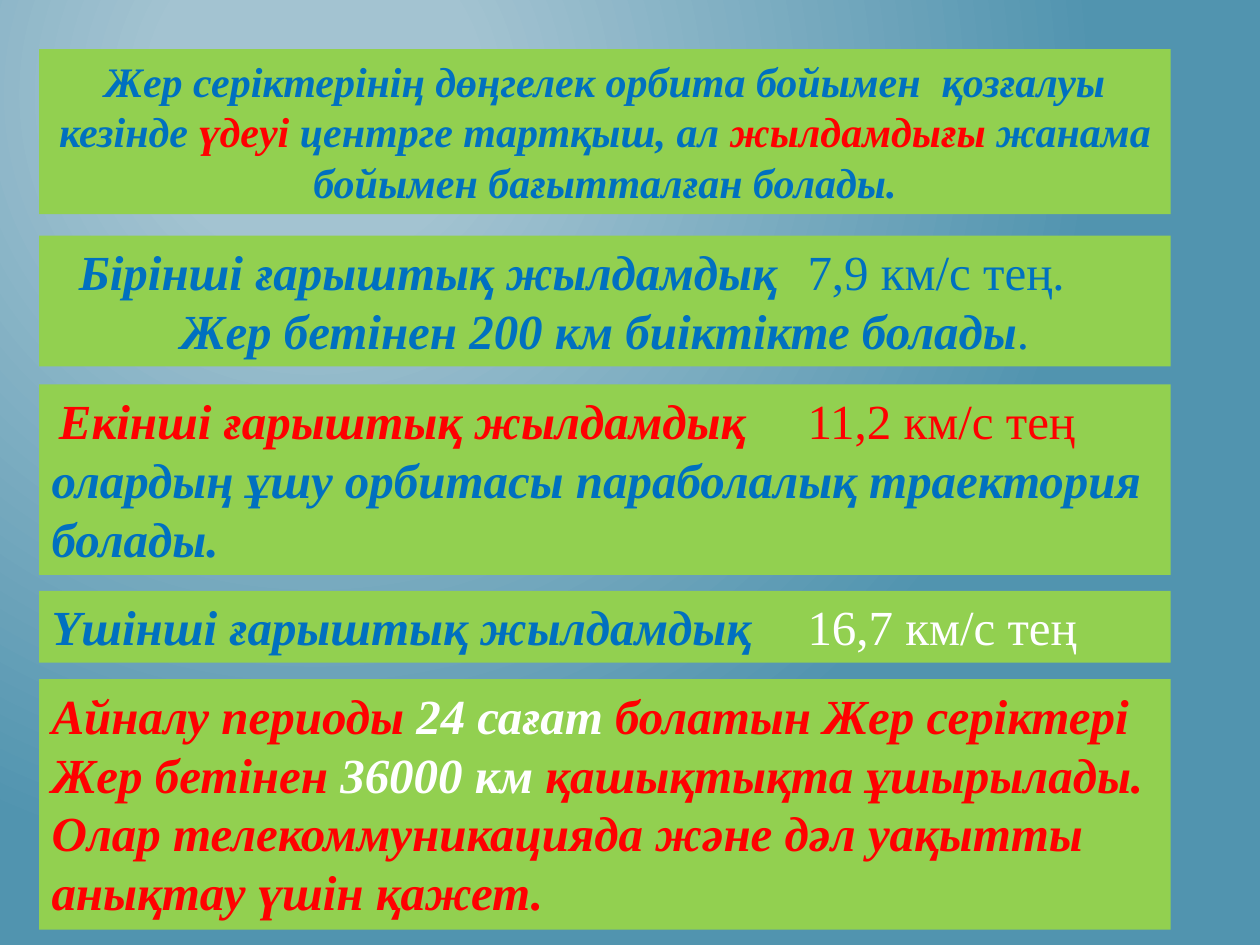
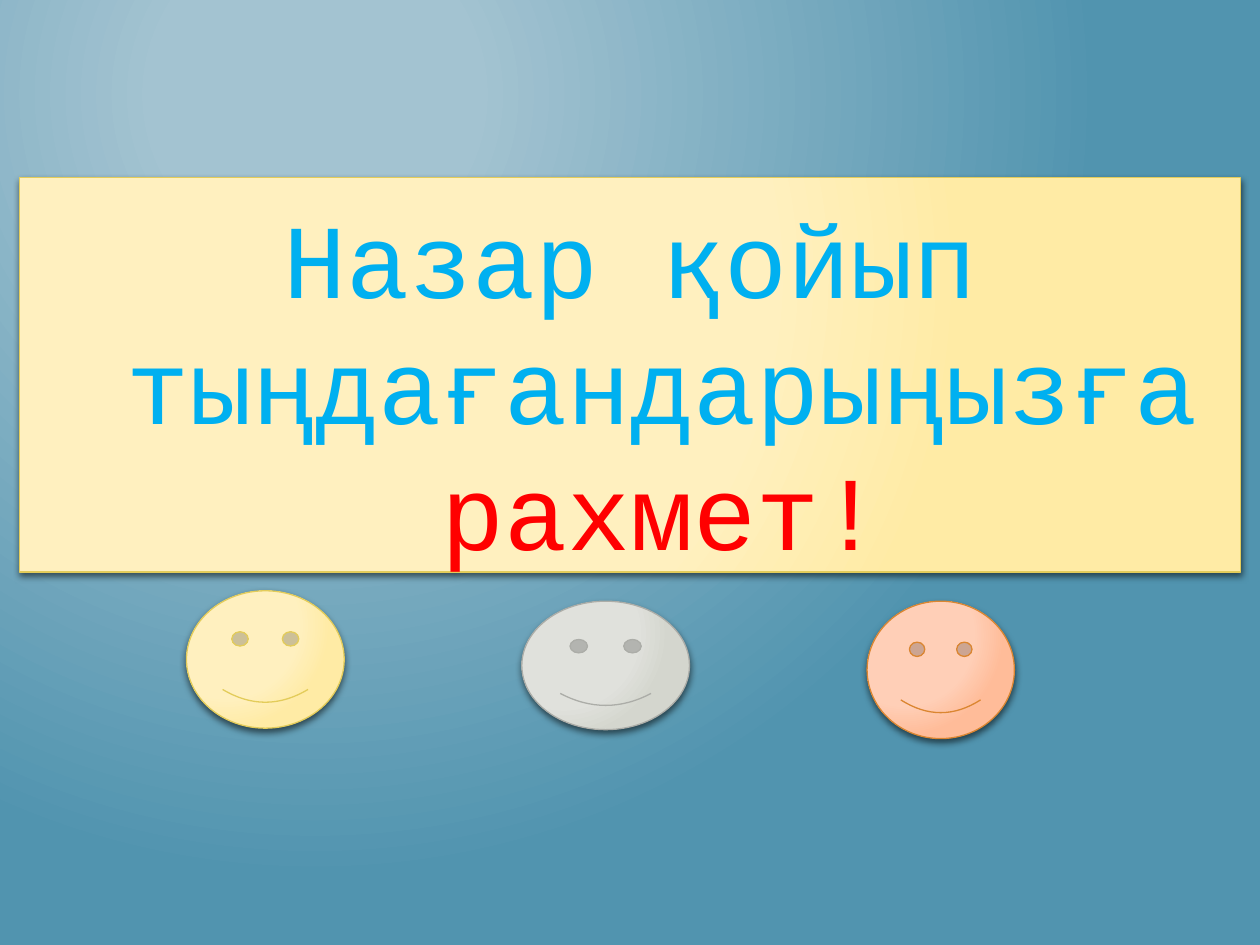
"""Build two slides on the motion of Earth satellites."""
from lxml import etree
from pptx import Presentation
from pptx.dml.color import RGBColor
from pptx.enum.shapes import MSO_SHAPE
from pptx.enum.text import MSO_ANCHOR, MSO_AUTO_SIZE, PP_ALIGN
from pptx.oxml.ns import qn
from pptx.util import Cm, Pt

RECTANGLE, SMILEY = MSO_SHAPE.RECTANGLE, MSO_SHAPE.SMILEY_FACE
LEFT, CENTER = PP_ALIGN.LEFT, PP_ALIGN.CENTER
TOP, BOTTOM = MSO_ANCHOR.TOP, MSO_ANCHOR.BOTTOM
NO_AUTOFIT = MSO_AUTO_SIZE.NONE

SKY_LIGHT, SKY_DARK = RGBColor(0xA3, 0xC3, 0xD1), RGBColor(0x51, 0x94, 0xAF)
GREEN = RGBColor(0x92, 0xD0, 0x50)
BLUE = RGBColor(0x00, 0x70, 0xC0)
CYAN = RGBColor(0x00, 0xB0, 0xF0)
RED = RGBColor(0xFF, 0x00, 0x00)
WHITE = RGBColor(0xFF, 0xFF, 0xFF)
BLACK = RGBColor(0x00, 0x00, 0x00)
YELLOW = (RGBColor(0xFF, 0xF0, 0xBF), RGBColor(0xFF, 0xEB, 0xA5), RGBColor(0xE3, 0xCC, 0x5A))
GREY = (RGBColor(0xE0, 0xE1, 0xDC), RGBColor(0xD4, 0xD6, 0xCE), RGBColor(0xAC, 0xAD, 0xA8))
ORANGE = (RGBColor(0xFF, 0xCF, 0xB7), RGBColor(0xFF, 0xBC, 0x99), RGBColor(0xDB, 0x86, 0x31))

SERIF, MONO = "Times New Roman", "Courier New"
TITLE_ONLY = 5
BAND_LEFT, BAND_WIDTH = 0.79, 22.81
LINE_FACTOR = 1.2


def add_element(parent, tag, **attributes):
    """Append a child element with the given attributes."""
    child = etree.SubElement(parent, qn(tag))
    for name, value in attributes.items():
        child.set(name, str(value))
    return child


class Deck:
    """Hold the shared style and the current slide."""

    def __init__(self):
        """Start a 4:3 presentation with a radial blue background."""
        self.presentation = Presentation()
        self.presentation.slide_width = Cm(25.4)
        self.presentation.slide_height = Cm(19.05)
        master = self.presentation.slide_master
        stops = ((20, SKY_LIGHT), (100, SKY_DARK))
        self.radial(master.background.fill, master.element, stops, (50, 20))
        self.slide = None

    def new_slide(self):
        """Add a slide and make it current."""
        layout = self.presentation.slide_layouts[TITLE_ONLY]
        self.slide = self.presentation.slides.add_slide(layout)

    def radial(self, fill, owner, stops, corner):
        """Give a fill a circular gradient."""
        fill.gradient()
        gradient = next(owner.iter(qn("a:gradFill")))
        for child in list(gradient):
            gradient.remove(child)
        stop_list = add_element(gradient, "a:gsLst")
        for position, color in stops:
            stop = add_element(stop_list, "a:gs", pos=position * 1000)
            add_element(stop, "a:srgbClr", val=color)
        circle = add_element(gradient, "a:path", path="circle")
        left, top = corner
        add_element(circle, "a:fillToRect", l=left * 1000, t=top * 1000, r=100000, b=100000)

    def place(self, shape, left, top, width, height):
        """Position a shape by lengths in centimetres."""
        shape.left, shape.top = Cm(left), Cm(top)
        shape.width, shape.height = Cm(width), Cm(height)

    def add_rectangle(self, box):
        """Add a rectangle without shadow."""
        shape = self.slide.shapes.add_shape(RECTANGLE, *map(Cm, box))
        shape.shadow.inherit = False
        return shape

    def glossy(self, shape, palette):
        """Apply a soft gradient, thin outline and drop shadow."""
        inner, outer, outline = palette
        self.radial(shape.fill, shape.element, ((0, inner), (69, inner), (100, outer)), (50, 50))
        shape.line.color.rgb = outline
        shape.line.width = Pt(0.75)
        shape.shadow.inherit = False
        effects = next(shape.element.iter(qn("a:effectLst")))
        shadow = add_element(effects, "a:outerShdw", blurRad=Pt(4), dist=Pt(2),
                             dir=90 * 60000, rotWithShape=0)
        color = add_element(shadow, "a:srgbClr", val=BLACK)
        add_element(color, "a:alpha", val=55000)

    def fill_text(self, shape, paragraphs, font, size, alignments, anchor=TOP):
        """Fill a shape with paragraphs of (text, colour, emphasis) runs."""
        frame = shape.text_frame
        frame.word_wrap = True
        frame.auto_size = NO_AUTOFIT
        frame.vertical_anchor = anchor
        for index, (runs, alignment) in enumerate(zip(paragraphs, alignments)):
            paragraph = frame.paragraphs[0] if index == 0 else frame.add_paragraph()
            paragraph.alignment = alignment
            paragraph.line_spacing = Pt(size * LINE_FACTOR)
            paragraph.font.name = font
            paragraph.font.size = Pt(size)
            for text, color, emphasis in runs:
                run = paragraph.add_run()
                run.text = text
                run.font.color.rgb = color
                run.font.bold = run.font.italic = emphasis
        return frame

    def band(self, top, height, paragraphs, alignments=(LEFT,), size=28,
             is_title=False, indent=0, tab=None):
        """Add a green text band, with an optional tab stop on its first line."""
        box = (BAND_LEFT, top, BAND_WIDTH, height)
        if is_title:
            shape = self.slide.shapes.title
            self.place(shape, *box)
        else:
            shape = self.add_rectangle(box)
        shape.fill.solid()
        shape.fill.fore_color.rgb = GREEN
        shape.line.fill.background()
        frame = self.fill_text(shape, paragraphs, SERIF, size, alignments)
        if tab:
            properties = frame.paragraphs[0]._p.get_or_add_pPr()
            properties.set("indent", str(Cm(indent)))
            tabs = etree.Element(qn("a:tabLst"))
            add_element(tabs, "a:tab", pos=Cm(tab), algn="l")
            properties.find(qn("a:lnSpc")).addnext(tabs)

    def message(self, box, paragraphs):
        """Turn the title into a large glossy message."""
        shape = self.slide.shapes.title
        self.place(shape, *box)
        self.glossy(shape, YELLOW)
        frame = self.fill_text(shape, paragraphs, MONO, 60, [CENTER] * len(paragraphs), BOTTOM)
        frame.margin_bottom = 0

    def smiley(self, box, palette):
        """Add a glossy smiling face."""
        self.glossy(self.slide.shapes.add_shape(SMILEY, *map(Cm, box)), palette)


def build_velocities(deck):
    """Build the slide on orbital velocities."""
    deck.new_slide()
    deck.band(0.99, 3.33, [[
        ("Жер серіктерінің дөңгелек орбита бойымен  қозғалуы кезінде ", BLUE, True),
        ("үдеуі", RED, True),
        (" центрге тартқыш, ал ", BLUE, True),
        ("жылдамдығы ", RED, True),
        ("жанама бойымен бағытталған болады.", BLUE, True),
    ]], (CENTER,), size=24, is_title=True)
    deck.band(4.75, 2.64, [
        [("Бірінші ғарыштық жылдамдық\t", BLUE, True), ("7,9 км/с тең.", BLUE, False)],
        [("Жер бетінен 200 км биіктікте болады", BLUE, True), (".", BLUE, False)],
    ], (LEFT, CENTER), indent=0.55, tab=16.6)
    deck.band(7.75, 3.84, [[
        ("Екінші ғарыштық жылдамдық\t", RED, True),
        ("11,2 км/с тең ", RED, False),
        ("олардың ұшу орбитасы параболалық траектория болады.", BLUE, True),
    ]], indent=0.15, tab=15.75)
    deck.band(11.91, 1.45, [[
        ("Үшінші ғарыштық жылдамдық\t", BLUE, True),
        ("16,7 км/с тең", WHITE, False),
    ]], tab=15.6)
    deck.band(13.69, 5.05, [[
        ("Айналу периоды ", RED, True),
        ("24 сағат ", WHITE, True),
        ("болатын Жер серіктері Жер бетінен ", RED, True),
        ("36000 км ", WHITE, True),
        ("қашықтықта ұшырылады. Олар телекоммуникацияда және дәл уақытты "
         "анықтау үшін қажет.", RED, True),
    ]])


def build_thanks(deck):
    """Build the closing slide."""
    deck.new_slide()
    deck.message((0.4, 3.58, 24.61, 7.95), [
        [("Назар қойып", CYAN, False)],
        [(" тыңдағандарыңызға", CYAN, False)],
        [(" рахмет!", RED, False)],
    ])
    deck.smiley((3.76, 11.91, 3.18, 2.77), YELLOW)
    deck.smiley((10.52, 12.12, 3.38, 2.59), GREY)
    deck.smiley((17.48, 12.12, 2.97, 2.77), ORANGE)


def main():
    """Build and save the presentation."""
    deck = Deck()
    build_velocities(deck)
    build_thanks(deck)
    deck.presentation.save("out.pptx")


if __name__ == "__main__":
    main()
